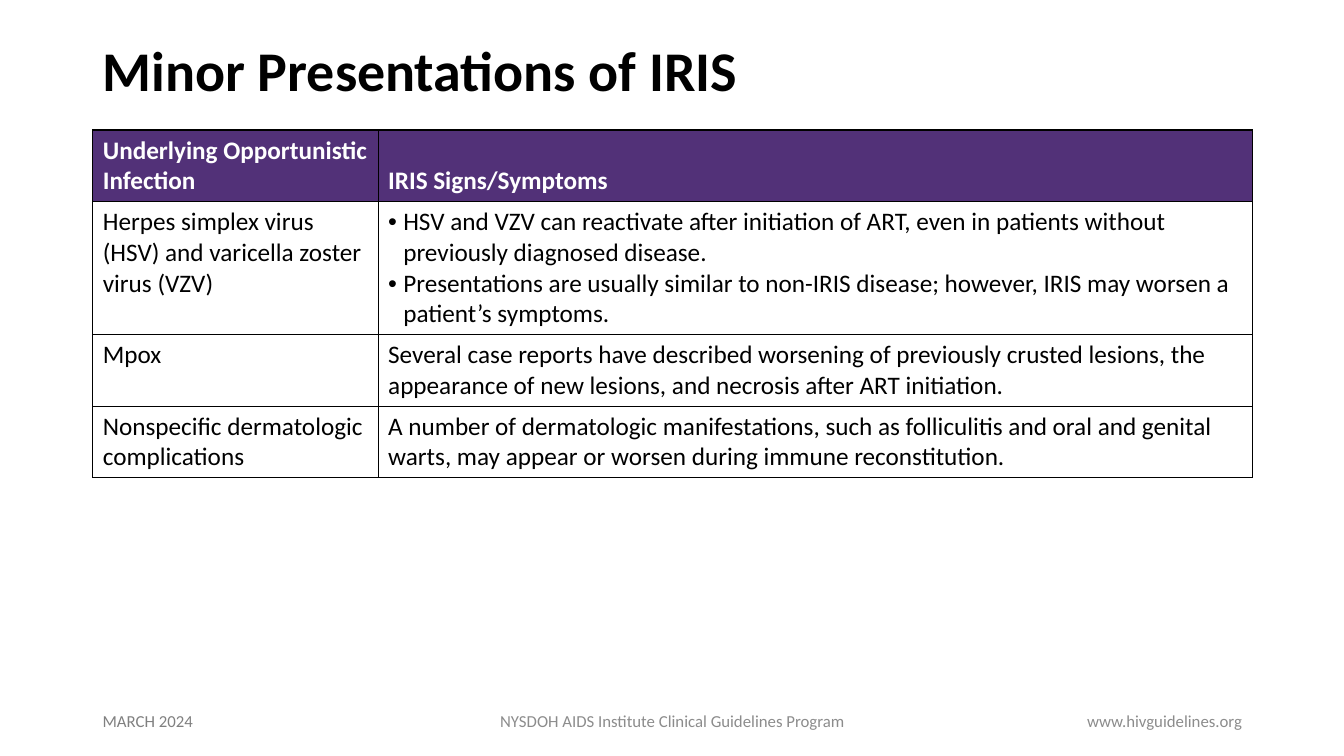
from lxml import etree
from pptx import Presentation
from pptx.dml.color import RGBColor
from pptx.enum.text import MSO_ANCHOR as Anchor, PP_ALIGN as Align
from pptx.oxml.ns import qn
from pptx.util import Inches, Pt

# Content
TITLE = "Minor Presentations of IRIS"
ROWS = [
    (["Underlying Opportunistic Infection"], ["IRIS Signs/Symptoms"]),
    (["Herpes simplex virus (HSV) and varicella zoster virus (VZV)"],
     ["HSV and VZV can reactivate after initiation of ART, even in patients "
      "without previously diagnosed disease.",
      "Presentations are usually similar to non-IRIS disease; however, IRIS may "
      "worsen a patient’s symptoms."]),
    (["Mpox"],
     ["Several case reports have described worsening of previously crusted "
      "lesions, the appearance of new lesions, and necrosis after ART initiation."]),
    (["Nonspecific dermatologic complications"],
     ["A number of dermatologic manifestations, such as folliculitis and oral and "
      "genital warts, may appear or worsen during immune reconstitution."]),
]
FOOTERS = [  # text, left, width, alignment, colour
    ("MARCH 2024", 0.92, 3, Align.LEFT, "date"),
    ("NYSDOH AIDS Institute Clinical Guidelines Program", 4.42, 4.5, Align.CENTER, "footer"),
    ("www.hivguidelines.org", 9.42, 3, Align.RIGHT, "footer"),
]
COLORS = {"text": "000000", "header": "523178", "header_text": "FFFFFF",
          "border": "000000", "footer": "8C8C8C", "date": "808080"}
FONT = "Calibri"
LEFT, WIDTH = 0.92, 11.5
COL_WIDTHS = [2.83, 8.67]
ROW_HEIGHTS = [0.71, 1.32, 0.71, 0.71]


def add_run(p, text, size, color, bold=False):
    r = p.add_run()
    r.text = text
    r.font.name, r.font.size, r.font.bold = FONT, Pt(size), bold
    r.font.color.rgb = RGBColor.from_string(COLORS[color])


def add_text(slide, box, text, size, color, align=Align.LEFT, bold=False):
    tf = slide.shapes.add_textbox(*map(Inches, box)).text_frame
    tf.word_wrap = True
    tf.vertical_anchor = Anchor.MIDDLE
    p = tf.paragraphs[0]
    p.alignment = align
    add_run(p, text, size, color, bold)
    return p


def add_bullet(p):
    pPr = p._p.get_or_add_pPr()
    pPr.set("marL", str(Inches(0.15)))
    pPr.set("indent", str(-Inches(0.15)))
    etree.SubElement(pPr, qn("a:buFont")).set("typeface", "Arial")
    etree.SubElement(pPr, qn("a:buChar")).set("char", "•")


def add_borders(cell):
    tcPr = cell._tc.get_or_add_tcPr()
    for i, side in enumerate(("lnL", "lnR", "lnT", "lnB")):
        ln = etree.Element(qn(f"a:{side}"), w=str(Pt(1)))
        fill = etree.SubElement(ln, qn("a:solidFill"))
        etree.SubElement(fill, qn("a:srgbClr")).set("val", COLORS["border"])
        tcPr.insert(i, ln)


def fill_cell(cell, lines, header):
    if header:
        cell.fill.solid()
        cell.fill.fore_color.rgb = RGBColor.from_string(COLORS["header"])
    else:
        cell.fill.background()
    add_borders(cell)
    cell.vertical_anchor = Anchor.BOTTOM if header else Anchor.TOP
    tf = cell.text_frame
    for i, line in enumerate(lines):
        p = tf.add_paragraph() if i else tf.paragraphs[0]
        if len(lines) > 1:
            add_bullet(p)
        add_run(p, line, 18, "header_text" if header else "text", header)


prs = Presentation()
prs.slide_width, prs.slide_height = Inches(13.33), Inches(7.5)
s = prs.slides.add_slide(prs.slide_layouts[6])

# Title
add_text(s, (LEFT, 0, WIDTH, 1.45), TITLE, 40, "text", bold=True).line_spacing = 0.9

# Table
table = s.shapes.add_table(len(ROWS), len(COL_WIDTHS), Inches(LEFT), Inches(1.29),
                           Inches(WIDTH), Inches(sum(ROW_HEIGHTS))).table
table.horz_banding = False
for col, width in zip(table.columns, COL_WIDTHS):
    col.width = Inches(width)
for y, (row, height) in enumerate(zip(ROWS, ROW_HEIGHTS)):
    table.rows[y].height = Inches(height)
    for x, lines in enumerate(row):
        fill_cell(table.cell(y, x), lines, y == 0)

# Footer
for text, left, width, align, color in FOOTERS:
    add_text(s, (left, 6.95, width, 0.4), text, 12, color, align)

prs.save("out.pptx")
